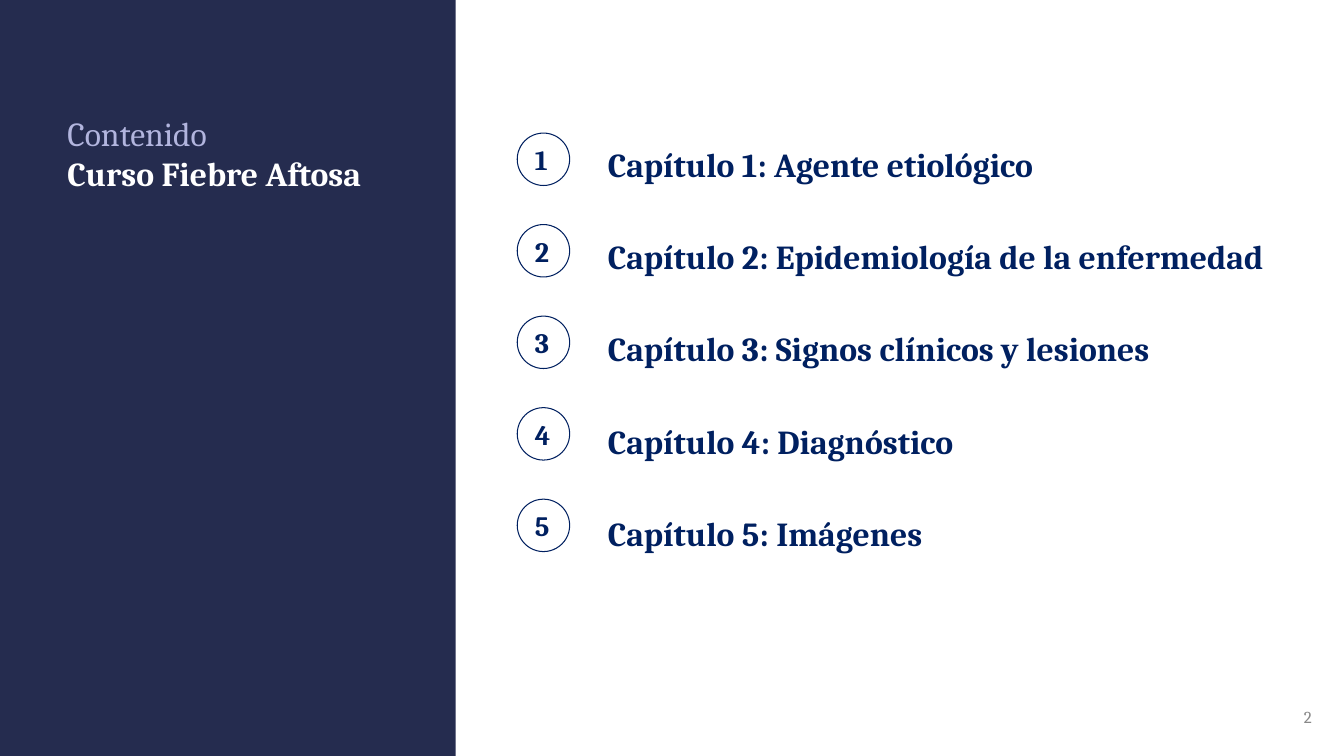
from pptx import Presentation
from pptx.dml.color import RGBColor
from pptx.enum.shapes import MSO_SHAPE as Shape
from pptx.enum.text import MSO_ANCHOR as Anchor, PP_ALIGN as Align
from pptx.util import Inches, Pt

NAVY = "002060"
CHAPTERS = ["Agente etiológico", "Epidemiología de la enfermedad",
            "Signos clínicos y lesiones", "Diagnóstico", "Imágenes"]


def color(code):
    return RGBColor.from_string(code)


def write(frame, text, size=24, ink=NAVY, bold=True, align=Align.LEFT,
          gap=0, lead=1.0):
    """Add a paragraph to the frame, using its empty first one if free."""
    frame.word_wrap = True
    para = frame.paragraphs[0] if not frame.text else frame.add_paragraph()
    para.alignment = align
    para.space_before = Pt(gap)
    para.line_spacing = lead
    run = para.add_run()
    run.text = text
    run.font.name = "Cambria"
    run.font.size = Pt(size)
    run.font.bold = bold
    run.font.color.rgb = color(ink)


prs = Presentation()
prs.slide_width, prs.slide_height = Inches(13.33), Inches(7.5)
slide = prs.slides.add_slide(prs.slide_layouts[6])
shapes = slide.shapes

# Side panel
panel = shapes.add_shape(Shape.RECTANGLE, Inches(-0.15), Inches(-0.08),
                         Inches(4.67), Inches(7.73))
panel.shadow.inherit = False
panel.fill.solid()
panel.fill.fore_color.rgb = color("252C4F")
panel.line.fill.background()

# Page number
page = shapes.add_textbox(Inches(10.11), Inches(6.91),
                          Inches(3), Inches(0.4)).text_frame
page.vertical_anchor = Anchor.MIDDLE
write(page, "2", size=12, ink="888888", bold=False, align=Align.RIGHT)

# Title
title = shapes.add_textbox(Inches(0.57), Inches(1.07),
                           Inches(3.41), Inches(0.91)).text_frame
write(title, "Contenido", ink="B2B5DE", bold=False)
write(title, "Curso Fiebre Aftosa", ink="FFFFFF")

# Chapter list with numbered circles
body = shapes.add_textbox(Inches(5.93), Inches(1.32),
                          Inches(7.18), Inches(5.76)).text_frame
for i, name in enumerate(CHAPTERS):
    num = i + 1
    write(body, f"Capítulo {num}: {name}", gap=32.7 if i else 0, lead=1.15)

    ring = shapes.add_shape(Shape.OVAL, Inches(5.13), Inches(1.32 + 0.908 * i),
                            Inches(0.52), Inches(0.52))
    ring.shadow.inherit = False
    ring.fill.background()
    ring.line.color.rgb = color(NAVY)
    ring.line.width = Pt(0.75)
    label = ring.text_frame
    label.vertical_anchor = Anchor.MIDDLE
    label.margin_left = label.margin_right = Inches(0.1)
    label.margin_top = label.margin_bottom = Inches(0.1)
    write(label, str(num), size=20)

prs.save("out.pptx")
